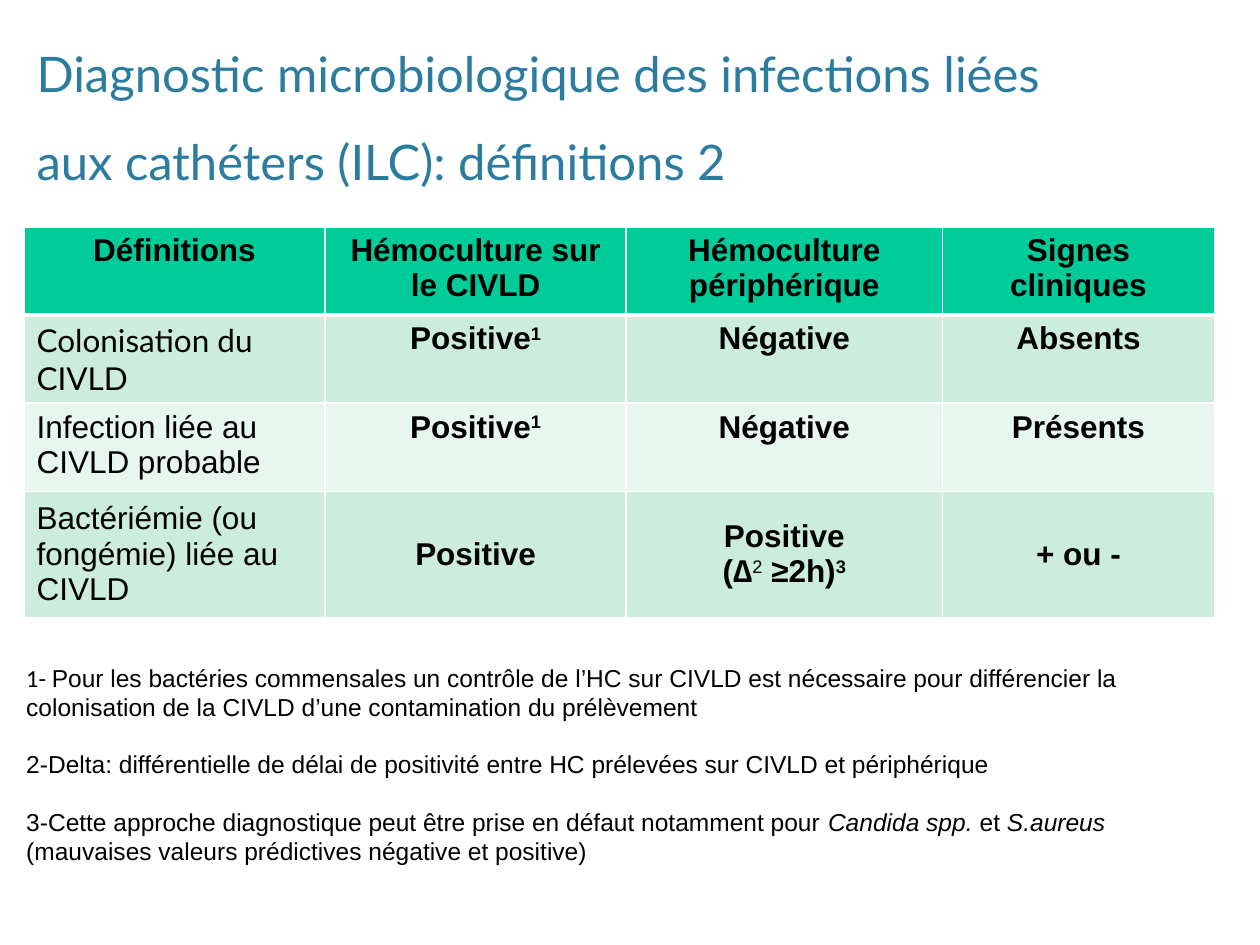
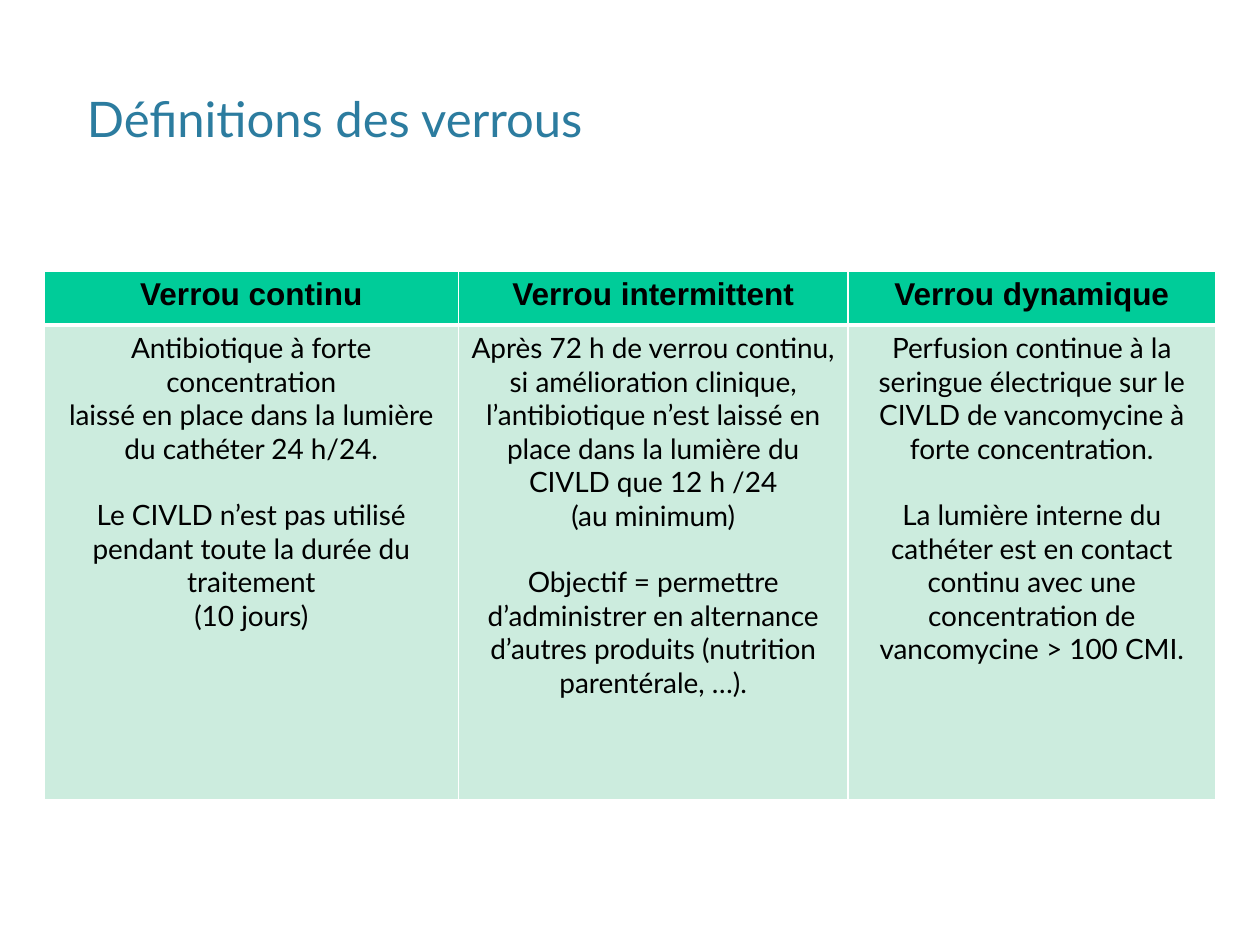
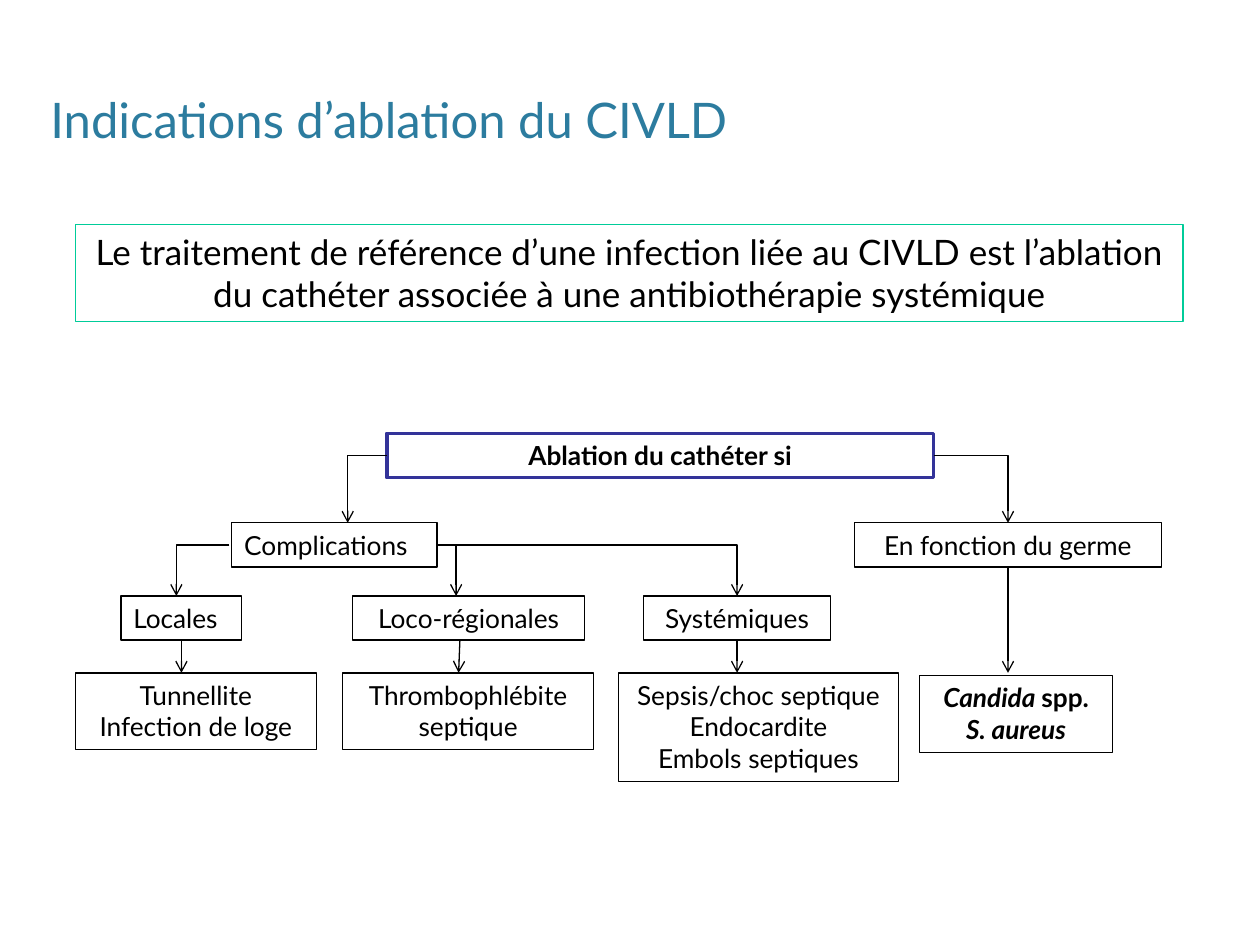
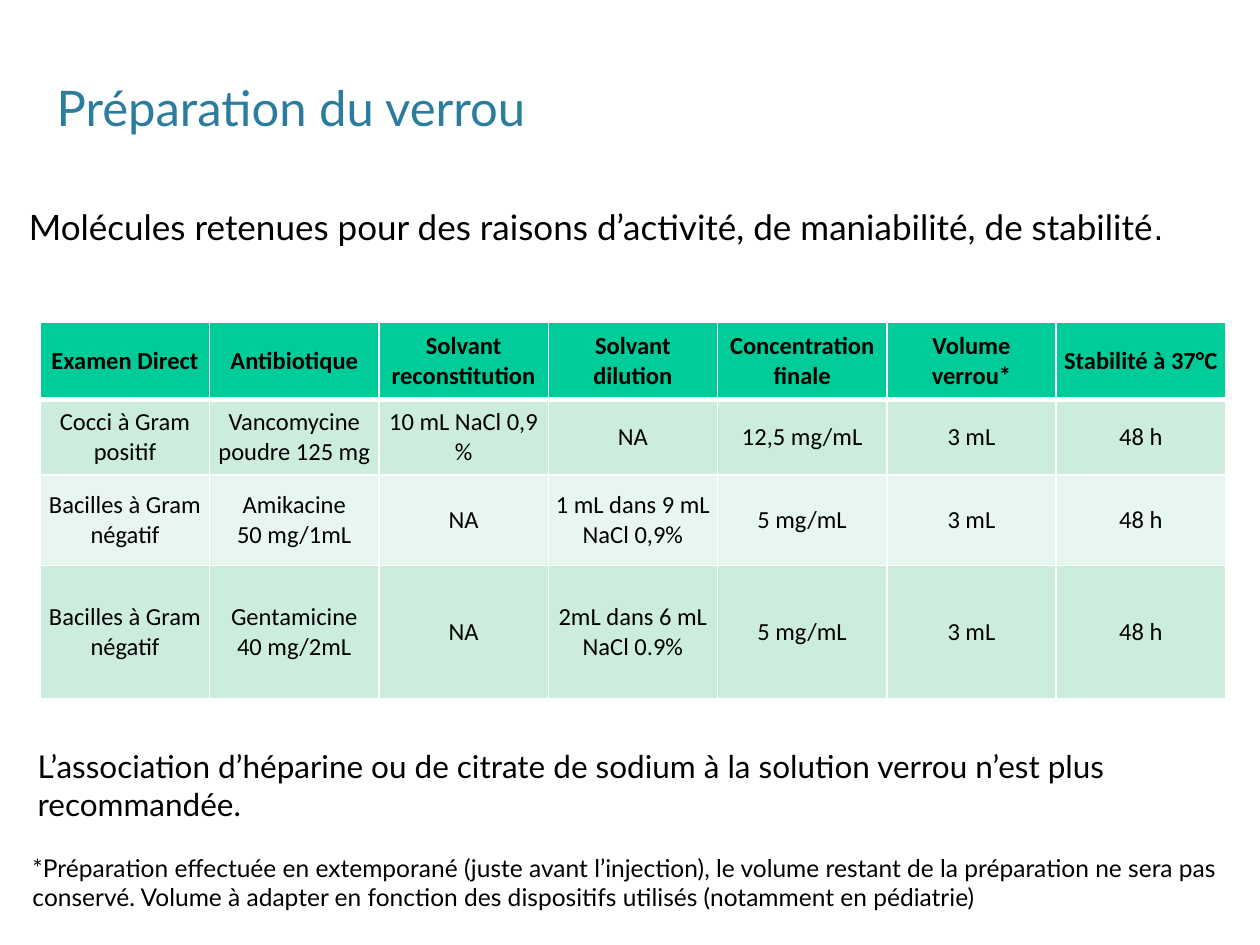
from dataclasses import dataclass, replace
from typing import Optional, Union

from lxml import etree
from pptx import Presentation
from pptx.dml.color import RGBColor
from pptx.enum.shapes import MSO_CONNECTOR, MSO_SHAPE
from pptx.enum.text import MSO_ANCHOR, MSO_AUTO_SIZE, PP_ALIGN
from pptx.oxml.ns import qn
from pptx.util import Inches, Pt

LEFT, CENTER = PP_ALIGN.LEFT, PP_ALIGN.CENTER
TOP, MIDDLE = MSO_ANCHOR.TOP, MSO_ANCHOR.MIDDLE
NO_AUTOFIT = MSO_AUTO_SIZE.NONE
RECTANGLE = MSO_SHAPE.RECTANGLE
STRAIGHT, ELBOW = MSO_CONNECTOR.STRAIGHT, MSO_CONNECTOR.ELBOW
BOTTOM_SIDE = 2
TITLE_ONLY_LAYOUT = 5

SLIDE_WIDTH, SLIDE_HEIGHT = Inches(10), Inches(7.5)
COLORS = {
    "title": "2C7C9F",
    "text": "000000",
    "accent": "00CC99",
    "band": "CCECDE",
    "light_band": "E7F6EF",
    "border": "FFFFFF",
    "root": "333399",
}


@dataclass(frozen=True)
class Run:
    text: str
    font: Optional[str] = None
    bold: Optional[bool] = None
    italic: Optional[bool] = None
    superscript: bool = False


@dataclass(frozen=True)
class Line:
    runs: tuple[Run, ...]
    before: float = 0


@dataclass(frozen=True)
class Style:
    size: float
    font: str = "Lato"
    color: str = "text"
    bold: bool = False
    align: PP_ALIGN = LEFT
    spacing: float = 1.0


@dataclass(frozen=True)
class Frame:
    """Shares of the slide's width and height, in percent."""
    left: float
    top: float
    width: float
    height: float

    def lengths(self) -> tuple:
        return (across(self.left), down(self.top), across(self.width), down(self.height))


@dataclass(frozen=True)
class Grid:
    left: float
    top: float
    columns: tuple[float, ...]
    rows: tuple[float, ...]
    header: Style
    body: Style
    first_column: Style
    middle_rows: tuple[int, ...] = ()
    margin: Optional[float] = None


@dataclass(frozen=True)
class Box:
    frame: Frame
    lines: tuple
    style: Style
    line_color: str = "text"
    line_width: float = 0.75


TextLine = Union[str, Line]
Cell = Union[str, Line, tuple]
Point = tuple[float, float]

TITLE = Style(28, color="title")
WIDE_TITLE = replace(TITLE, spacing=1.5)
BOX = Style(15, align=CENTER)
LEFT_BOX = Style(15)
HEADER = Style(18, "Arial", bold=True, align=CENTER)
SMALL_CELL = Style(14, "Calibri", align=CENTER)


def across(share: float) -> int:
    return round(SLIDE_WIDTH * share / 100)


def down(share: float) -> int:
    return round(SLIDE_HEIGHT * share / 100)


def color(name: str) -> RGBColor:
    return RGBColor.from_string(COLORS[name])


def write(text_frame, lines: tuple, style: Style) -> None:
    for index, line in enumerate(lines):
        if isinstance(line, str):
            line = Line((Run(line),))
        paragraph = text_frame.paragraphs[0] if index == 0 else text_frame.add_paragraph()
        paragraph.alignment = style.align
        paragraph.line_spacing = style.spacing
        if line.before:
            paragraph.space_before = Pt(line.before)
        font = paragraph.font
        font.size, font.name, font.bold = Pt(style.size), style.font, style.bold
        font.color.rgb = color(style.color)
        for part in line.runs:
            run = paragraph.add_run()
            run.text = part.text
            if part.font:
                run.font.name = part.font
            if part.bold is not None:
                run.font.bold = part.bold
            if part.italic is not None:
                run.font.italic = part.italic
            if part.superscript:
                run._r.get_or_add_rPr().set("baseline", "30000")


def place_text(shape, frame: Frame, lines: tuple, style: Style) -> None:
    shape.left, shape.top, shape.width, shape.height = frame.lengths()
    text_frame = shape.text_frame
    text_frame.word_wrap = True
    text_frame.auto_size = NO_AUTOFIT
    text_frame.vertical_anchor = TOP
    write(text_frame, lines, style)


def add_titled_slide(presentation, title: str, frame: Frame, style: Style = WIDE_TITLE):
    slide = presentation.slides.add_slide(presentation.slide_layouts[TITLE_ONLY_LAYOUT])
    place_text(slide.shapes.title, frame, (title,), style)
    return slide


def add_text(slide, frame: Frame, lines: tuple, style: Style) -> None:
    place_text(slide.shapes.add_textbox(*frame.lengths()), frame, lines, style)


def add_box(slide, box: Box):
    shape = slide.shapes.add_shape(RECTANGLE, *box.frame.lengths())
    shape.shadow.inherit = False
    shape.fill.background()
    shape.line.color.rgb = color(box.line_color)
    shape.line.width = Pt(box.line_width)
    place_text(shape, box.frame, box.lines, box.style)
    return shape


def add_arrow(slide, begin: Point, end: Point, kind=STRAIGHT):
    connector = slide.shapes.add_connector(
        kind, across(begin[0]), down(begin[1]), across(end[0]), down(end[1])
    )
    connector.line.color.rgb = color("text")
    connector.line.width = Pt(0.75)
    etree.SubElement(connector.line._get_or_add_ln(), qn("a:tailEnd"), type="arrow")
    properties = connector._element.spPr
    etree.SubElement(properties, qn("a:effectLst"))
    if kind == ELBOW:
        properties.find(qn("a:prstGeom")).set("prst", "bentConnector2")
    return connector


def set_borders(cell, row: int) -> None:
    widths = {"lnL": 1, "lnR": 1, "lnT": 3 if row == 1 else 1, "lnB": 3 if row == 0 else 1}
    properties = cell._tc.get_or_add_tcPr()
    for side, width in widths.items():
        border = etree.SubElement(properties, qn(f"a:{side}"), w=str(Pt(width)))
        fill = etree.SubElement(border, qn("a:solidFill"))
        etree.SubElement(fill, qn("a:srgbClr"), val=COLORS["border"])


def add_grid(slide, grid: Grid, content: tuple[tuple[Cell, ...], ...]) -> None:
    frame = Frame(grid.left, grid.top, sum(grid.columns), sum(grid.rows))
    table = slide.shapes.add_table(
        len(grid.rows), len(grid.columns), *frame.lengths()
    ).table
    table.horz_banding = False
    for column, width in zip(table.columns, grid.columns):
        column.width = across(width)
    for row, height in zip(table.rows, grid.rows):
        row.height = down(height)
    for row, cells in enumerate(content):
        for column, lines in enumerate(cells):
            cell = table.cell(row, column)
            set_borders(cell, row)
            cell.fill.solid()
            band = "band" if row % 2 else "light_band"
            cell.fill.fore_color.rgb = color(band if row else "accent")
            cell.vertical_anchor = MIDDLE if row in grid.middle_rows else TOP
            if grid.margin is not None:
                cell.margin_left = cell.margin_right = Inches(grid.margin)
                cell.margin_top = cell.margin_bottom = Inches(grid.margin)
            style = grid.body if column else grid.first_column
            lines = lines if isinstance(lines, tuple) else (lines,)
            write(cell.text_frame, lines, style if row else grid.header)


def add_diagnosis_slide(presentation) -> None:
    slide = add_titled_slide(
        presentation,
        "Diagnostic microbiologique des infections liées aux cathéters (ILC): définitions 2",
        Frame(1.9, 0.8, 88.2, 19.07),
    )
    positive = Line((Run("Positive"), Run("1", superscript=True)))
    delay = Line((
        Run("(∆"),
        Run("2", bold=False, superscript=True),
        Run(" ≥2h)"),
        Run("3", superscript=True),
    ))
    grid = Grid(
        1.9, 24, (23.9, 23.9, 25.1, 21.6), (9.33, 9.33, 9.33, 13.33),
        HEADER, HEADER, Style(18, "Arial"), middle_rows=(3,),
    )
    add_grid(slide, grid, (
        ("Définitions", "Hémoculture sur le CIVLD", "Hémoculture périphérique", "Signes cliniques"),
        (Line((Run("Colonisation du CIVLD", font="Lato"),)), positive, "Négative", "Absents"),
        ("Infection liée au CIVLD probable", positive, "Négative", "Présents"),
        ("Bactériémie (ou fongémie) liée au CIVLD", "Positive", ("Positive", delay), "+ ou -"),
    ))
    notes = (
        Line((
            Run("1- ", font="Calibri"),
            Run("Pour les bactéries commensales un contrôle de l’HC sur CIVLD est nécessaire "
                "pour différencier la colonisation de la CIVLD d’une contamination du prélèvement"),
        )),
        Line((Run("2-Delta: différentielle de délai de positivité entre HC prélevées "
                  "sur CIVLD et périphérique"),), before=16),
        Line((
            Run("3-Cette approche diagnostique peut être prise en défaut notamment pour "),
            Run("Candida spp.", italic=True),
            Run(" et "),
            Run("S.aureus", italic=True),
            Run(" (mauvaises valeurs prédictives négative et positive)"),
        ), before=16),
    )
    add_text(slide, Frame(1.1, 69.47, 96.2, 26.53), notes, Style(14, "Arial"))


def add_lock_definitions_slide(presentation) -> None:
    slide = add_titled_slide(
        presentation, "Définitions des verrous", Frame(5.9, 8.67, 50.2, 7.6), TITLE
    )
    body = Style(16, align=CENTER)
    grid = Grid(3.5, 28.67, (32.9, 30.9, 29.2), (5.73, 50.27), HEADER, body, body)

    def spaced(text: str) -> Line:
        return Line((Run(text),), before=19)

    add_grid(slide, grid, (
        ("Verrou continu", "Verrou intermittent", "Verrou dynamique"),
        (
            (
                "Antibiotique à forte concentration",
                "laissé en place dans la lumière du cathéter 24 h/24.",
                spaced("Le CIVLD n’est pas utilisé pendant toute la durée du traitement"),
                "(10 jours)",
            ),
            (
                "Après 72 h de verrou continu,",
                "si amélioration clinique,",
                "l’antibiotique n’est laissé en place dans la lumière du CIVLD que 12 h /24",
                "(au minimum)",
                spaced("Objectif = permettre d’administrer en alternance d’autres produits "
                       "(nutrition parentérale, …)."),
            ),
            (
                "Perfusion continue à la seringue électrique sur le CIVLD de vancomycine "
                "à forte concentration.",
                spaced("La lumière interne du cathéter est en contact continu avec une "
                       "concentration de vancomycine > 100 CMI."),
            ),
        ),
    ))


def add_removal_slide(presentation) -> None:
    slide = add_titled_slide(
        presentation, "Indications d’ablation du CIVLD", Frame(3, 5.73, 61.2, 9.6)
    )
    root_top, branch_top, kind_top, detail_top = 45.87, 55.33, 63.07, 71.2
    one_line, two_lines, three_lines = 4.67, 8.13, 11.47
    root_middle = root_top + one_line / 2
    branch_middle = branch_top + one_line / 2
    kind_bottom = kind_top + one_line

    germs = (
        Line((Run("Candida ", italic=True), Run("spp."))),
        Line((Run("S. aureus", italic=True),)),
    )
    boxes = {
        "reference": Box(
            Frame(6, 23.73, 87.9, 10.27),
            ("Le traitement de référence d’une infection liée au CIVLD est l’ablation du "
             "cathéter associée à une antibiothérapie systémique",),
            Style(20, align=CENTER), "accent",
        ),
        "root": Box(Frame(30.7, root_top, 43.4, one_line), ("Ablation du cathéter si",),
                    replace(BOX, bold=True), "root", 2),
        "complications": Box(Frame(18.4, branch_top, 16.3, one_line),
                             ("Complications",), LEFT_BOX),
        "germ": Box(Frame(67.8, branch_top, 24.4, one_line), ("En fonction du germe",), BOX),
        "local": Box(Frame(9.6, kind_top, 9.6, one_line), ("Locales",), LEFT_BOX),
        "regional": Box(Frame(28, kind_top, 18.4, one_line), ("Loco-régionales",), BOX),
        "systemic": Box(Frame(51.1, kind_top, 14.8, one_line), ("Systémiques",), BOX),
        "local detail": Box(Frame(6, detail_top, 19.1, two_lines),
                            ("Tunnellite", "Infection de loge"), BOX),
        "regional detail": Box(Frame(27.2, detail_top, 19.9, two_lines),
                               ("Thrombophlébite", "septique"), BOX),
        "systemic detail": Box(Frame(49.1, detail_top, 22.2, three_lines),
                               ("Sepsis/choc septique", "Endocardite", "Embols septiques"), BOX),
        "germ detail": Box(Frame(73, detail_top + 0.27, 15.3, two_lines), germs,
                           replace(BOX, bold=True)),
    }
    shapes = {name: add_box(slide, box) for name, box in boxes.items()}

    elbows = (
        ((30.7, root_middle), (27.6, branch_top)),
        ((74.1, root_middle), (80, branch_top)),
        ((18.2, branch_middle), (14, kind_top)),
        ((34.7, branch_middle), (36.2, kind_top)),
        ((34.7, branch_middle), (58.5, kind_top)),
    )
    for begin, end in elbows:
        add_arrow(slide, begin, end, ELBOW)
    add_arrow(slide, (36.5, kind_bottom), (36.4, detail_top))
    for name, center in (("local", 14.4), ("systemic", 58.5), ("germ", 80)):
        arrow = add_arrow(slide, (center, kind_bottom), (center, detail_top))
        arrow.begin_connect(shapes[name], BOTTOM_SIDE)


def add_preparation_slide(presentation) -> None:
    slide = add_titled_slide(
        presentation, "Préparation du verrou", Frame(3.5, 4.4, 42.9, 9.6)
    )
    grid = Grid(
        3.2, 34.13, (13.44,) * 7, (8.13, 8, 9.6, 14.13),
        replace(SMALL_CELL, bold=True), SMALL_CELL, SMALL_CELL,
        middle_rows=(0, 1, 2, 3), margin=0.06,
    )
    lock = ("3 mL", "48 h")
    add_grid(slide, grid, (
        ("Examen Direct", "Antibiotique", "Solvant reconstitution", "Solvant dilution",
         "Concentration finale", "Volume verrou*", "Stabilité à 37°C"),
        ("Cocci à Gram positif", "Vancomycine poudre 125 mg", "10 mL NaCl 0,9 %", "NA",
         "12,5 mg/mL", *lock),
        ("Bacilles à Gram négatif", ("Amikacine", "50 mg/1mL"), "NA",
         "1 mL dans 9 mL NaCl 0,9%", "5 mg/mL", *lock),
        ("Bacilles à Gram négatif", ("Gentamicine", "40 mg/2mL"), "NA",
         "2mL dans 6 mL NaCl 0.9%", "5 mg/mL", *lock),
    ))
    choice = Line((
        Run("Molécules retenues pour des raisons d’activité, de maniabilité, de stabilité"),
        Run(".", font="Arial"),
    ))
    add_text(slide, Frame(1.3, 21.07, 94.1, 10.27), (choice,), Style(20))
    add_text(
        slide, Frame(2, 78.4, 94.1, 9.47),
        ("L’association d’héparine ou de citrate de sodium à la solution verrou "
         "n’est plus recommandée.",),
        Style(18),
    )
    add_text(
        slide, Frame(1.6, 89.6, 98.4, 7.6),
        ("*Préparation effectuée en extemporané (juste avant l’injection), le volume restant "
         "de la préparation ne sera pas conservé. Volume à adapter en fonction des dispositifs "
         "utilisés (notamment en pédiatrie)",),
        Style(14),
    )


def main() -> None:
    presentation = Presentation()
    presentation.slide_width, presentation.slide_height = SLIDE_WIDTH, SLIDE_HEIGHT
    add_diagnosis_slide(presentation)
    add_lock_definitions_slide(presentation)
    add_removal_slide(presentation)
    add_preparation_slide(presentation)
    presentation.save("out.pptx")


if __name__ == "__main__":
    main()
